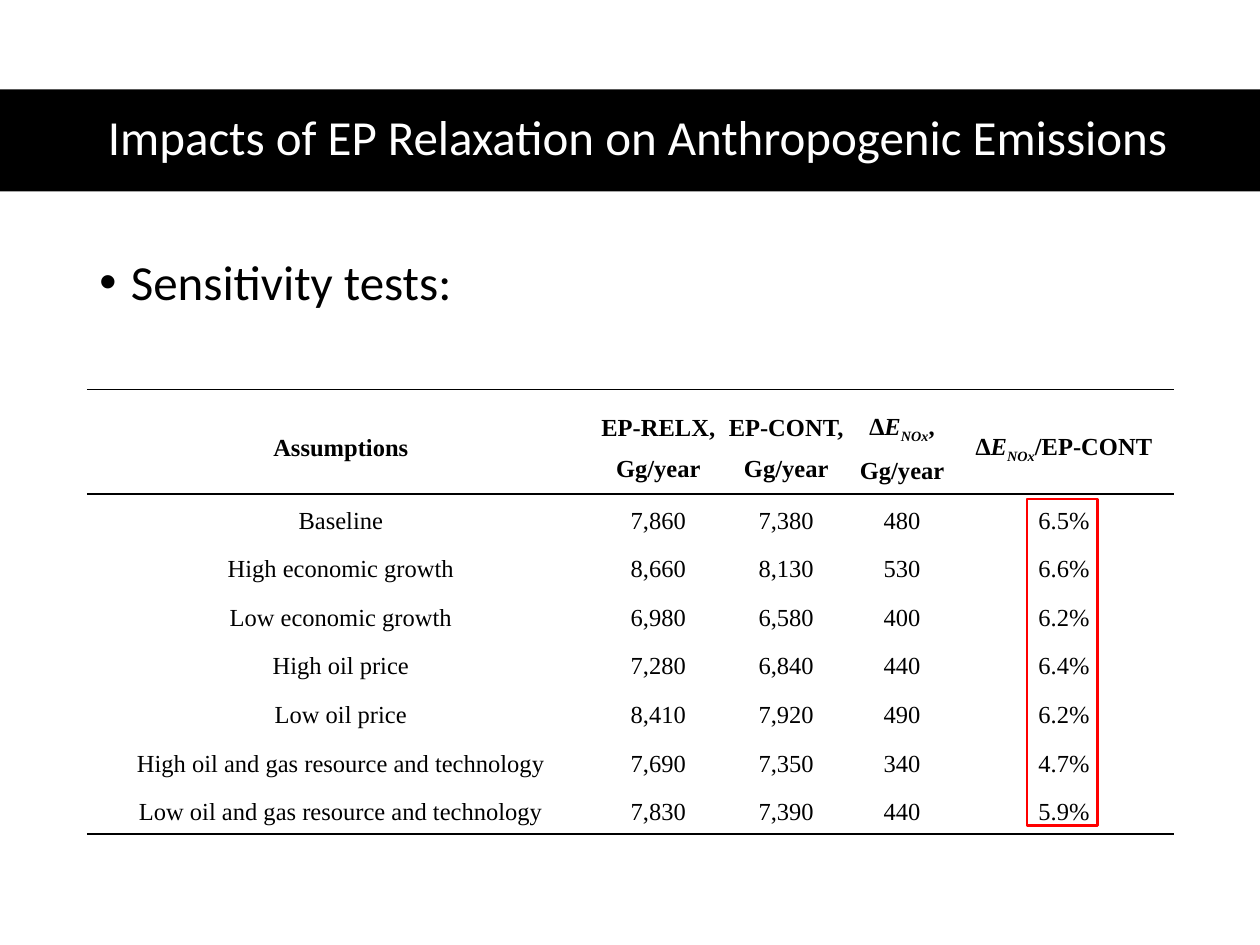
import pptx
import pptx.dml.color
import pptx.enum.shapes
import pptx.enum.text
import pptx.util
from lxml import etree
from pptx.oxml.ns import qn

Inches, Pt = pptx.util.Inches, pptx.util.Pt
RECTANGLE = pptx.enum.shapes.MSO_SHAPE.RECTANGLE
ALIGN = pptx.enum.text.PP_ALIGN
ANCHOR = pptx.enum.text.MSO_ANCHOR

COLORS = {"ink": "000000", "title": "FFFFFF", "highlight": "FF0000"}
TITLE = "Impacts of EP Relaxation on Anthropogenic Emissions"
BULLET = "Sensitivity tests:"

# A line is a plain string or a list of (text, style) runs.
DELTA_NOX = [("∆E", "italic"), ("NOx", "subscript")]
HEADINGS = [
    ["Assumptions"],
    ["EP-RELX,", "Gg/year"],
    ["EP-CONT,", "Gg/year"],
    [DELTA_NOX + [(",", "plain")], "Gg/year"],
    [DELTA_NOX + [("/EP-CONT", "plain")]],
]
SCENARIOS = [
    ("Baseline", "7,860", "7,380", "480", "6.5%"),
    ("High economic growth", "8,660", "8,130", "530", "6.6%"),
    ("Low economic growth", "6,980", "6,580", "400", "6.2%"),
    ("High oil price", "7,280", "6,840", "440", "6.4%"),
    ("Low oil price", "8,410", "7,920", "490", "6.2%"),
    ("High oil and gas resource and technology", "7,690", "7,350", "340", "4.7%"),
    ("Low oil and gas resource and technology", "7,830", "7,390", "440", "5.9%"),
]

SLIDE_W, SLIDE_H = 10, 7.5
BAND_TOP, BAND_H = 0.71, 0.81
MARGIN = 0.69
CONTENT_W = SLIDE_W - 2 * MARGIN
TABLE_TOP, TABLE_H, HEADER_H = 3.09, 3.53, 0.83
COLUMN_WIDTHS = [4.03, 1.01, 1.02, 0.82, 1.75]
ROW_H = (TABLE_H - HEADER_H) / len(SCENARIOS)


def rgb(name):
    return pptx.dml.color.RGBColor.from_string(COLORS[name])


def write(frame, lines, font="Calibri", size=28, color="ink", bold=False,
          align=ALIGN.LEFT, spacing=0.9, bullet=None):
    frame.word_wrap = True
    for index, line in enumerate(lines):
        paragraph = frame.paragraphs[0] if index == 0 else frame.add_paragraph()
        paragraph.alignment = align
        paragraph.line_spacing = spacing
        if bullet:
            properties = paragraph._p.get_or_add_pPr()
            properties.set("marL", str(Inches(0.25)))
            properties.set("indent", str(Inches(-0.25)))
            etree.SubElement(properties, qn("a:buFont"), typeface="Arial")
            etree.SubElement(properties, qn("a:buChar"), char=bullet)
        for text, style in [(line, "plain")] if isinstance(line, str) else line:
            run = paragraph.add_run()
            run.text = text
            run.font.name, run.font.size, run.font.bold = font, Pt(size), bold
            run.font.italic = style != "plain"
            run.font.color.rgb = rgb(color)
            if style == "subscript":
                run.font._element.set("baseline", "-25000")


def add_rectangle(slide, left, top, width, height, fill=None, line=None):
    shape = slide.shapes.add_shape(
        RECTANGLE, *map(Inches, (left, top, width, height)))
    shape.shadow.inherit = False
    if fill:
        shape.fill.solid()
        shape.fill.fore_color.rgb = rgb(fill)
    else:
        shape.fill.background()
    if line:
        shape.line.color.rgb = rgb(line)
        shape.line.width = Pt(1.5)
    else:
        shape.line.fill.background()


def add_text_box(slide, left, top, width, height, lines, anchor, **text_format):
    frame = slide.shapes.add_textbox(
        *map(Inches, (left, top, width, height))).text_frame
    frame.vertical_anchor = anchor
    write(frame, lines, **text_format)


def rule_cell(cell, ruled_sides):
    """Draw 1 pt lines on the ruled sides and clear the others."""
    properties = cell._tc.get_or_add_tcPr()
    for side in "LRTB":
        border = etree.SubElement(properties, qn(f"a:ln{side}"), w=str(Pt(1)))
        if side in ruled_sides:
            fill = etree.SubElement(border, qn("a:solidFill"))
            etree.SubElement(fill, qn("a:srgbClr"), val=COLORS["ink"])
        else:
            etree.SubElement(border, qn("a:noFill"))
    cell.fill.background()


def add_sensitivity_table(slide):
    rows = [HEADINGS] + [[[value] for value in row] for row in SCENARIOS]
    table = slide.shapes.add_table(
        len(rows), len(COLUMN_WIDTHS),
        *map(Inches, (MARGIN, TABLE_TOP, CONTENT_W, TABLE_H))).table
    table.first_row = table.horz_banding = False
    for column, width in zip(table.columns, COLUMN_WIDTHS):
        column.width = Inches(width)
    ruled = {0: "TB", 1: "T", len(rows) - 1: "B"}
    for r, row in enumerate(rows):
        header = r == 0
        table.rows[r].height = Inches(HEADER_H if header else ROW_H)
        for c, lines in enumerate(row):
            cell = table.cell(r, c)
            cell.margin_left = cell.margin_right = 0
            cell.margin_top = cell.margin_bottom = 0
            cell.vertical_anchor = ANCHOR.MIDDLE if header else ANCHOR.TOP
            rule_cell(cell, ruled.get(r, ""))
            write(cell.text_frame, lines, font="Times New Roman", size=14,
                  bold=header, align=ALIGN.CENTER, spacing=1.5)


def main():
    deck = pptx.Presentation()
    deck.slide_width, deck.slide_height = Inches(SLIDE_W), Inches(SLIDE_H)
    slide = deck.slides.add_slide(deck.slide_layouts[6])
    add_rectangle(slide, 0, BAND_TOP, SLIDE_W, BAND_H, fill="ink")
    add_text_box(slide, 0.46, 0.7, 9.2, BAND_H, [TITLE], ANCHOR.MIDDLE,
                 color="title", align=ALIGN.CENTER)
    add_text_box(slide, MARGIN, 2, CONTENT_W, 4.76, [BULLET], ANCHOR.TOP,
                 bullet="•")
    add_sensitivity_table(slide)
    add_rectangle(slide, 8.15, 3.96, 0.56, 2.59, line="highlight")
    deck.save("out.pptx")


if __name__ == "__main__":
    main()
